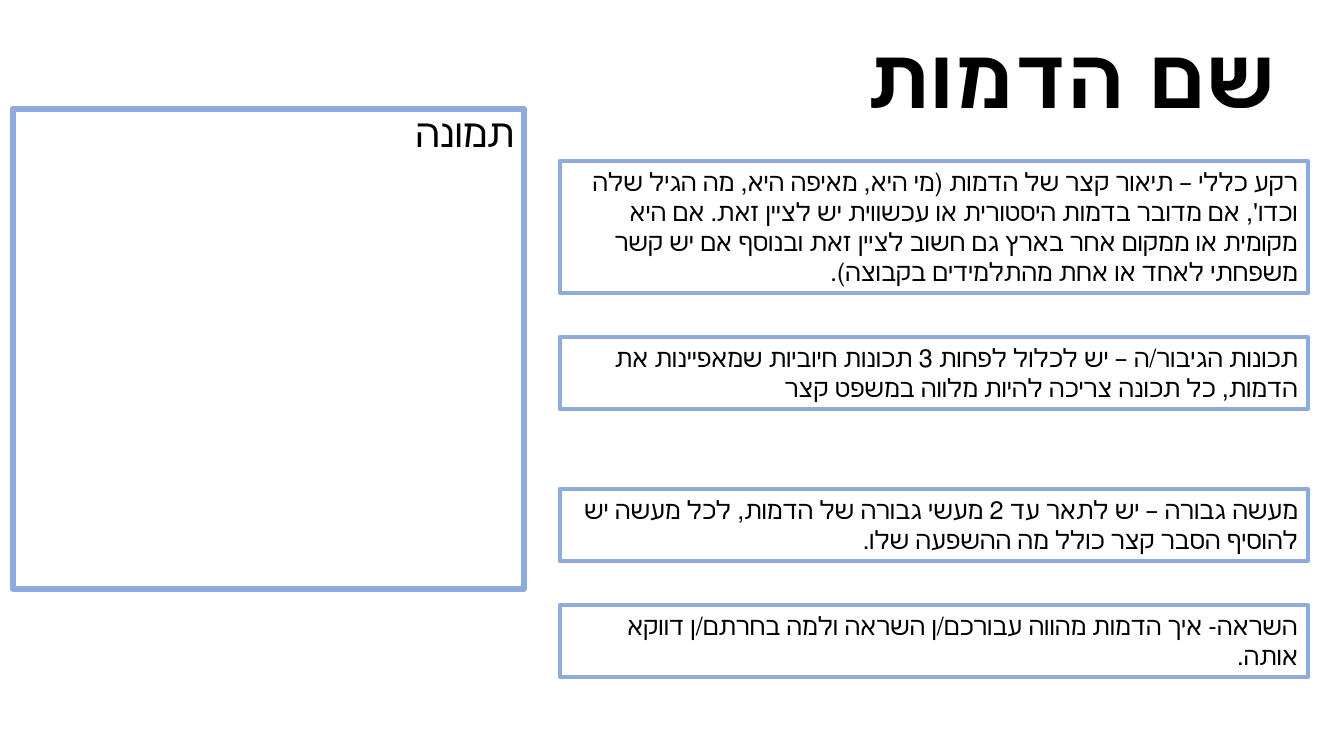
"""Build a Hebrew template slide that presents a hero."""
import dataclasses

import pptx
import pptx.dml.color
import pptx.enum.shapes
import pptx.enum.text
import pptx.util


@dataclasses.dataclass(frozen=True)
class Theme:
    ink: str = "000000"
    edge: str = "8FAADC"
    face: str = "Calibri"
    stop: str = "Montserrat"
    title: int = 60
    label: int = 28
    body: int = 18


@dataclasses.dataclass(frozen=True)
class Box:
    left: int
    top: int
    width: int
    height: int
    text: str
    size: int
    line: float = 0
    bold: bool = False
    space: float = 1
    before: int = 0
    grow: bool = True
    tail: str = ""


THEME = Theme()
SCALE = 914400 / 100.8
LEFT, WIDTH = 560, 748

PARTS = [
    (161, 132, "רקע כללי – תיאור קצר של הדמות (מי היא, מאיפה היא, מה הגיל שלה "
     "וכדו', אם מדובר בדמות היסטורית או עכשווית יש לציין זאת. אם היא "
     "מקומית או ממקום אחר בארץ גם חשוב לציין זאת ובנוסף אם יש קשר "
     "משפחתי לאחד או אחת מהתלמידים בקבוצה).", ""),
    (337, 72, "תכונות הגיבור/ה – יש לכלול לפחות 3 תכונות חיוביות שמאפיינות את "
     "הדמות, כל תכונה צריכה להיות מלווה במשפט קצר", ""),
    (489, 72, "מעשה גבורה – יש לתאר עד 2 מעשי גבורה של הדמות, לכל מעשה יש "
     "להוסיף הסבר קצר כולל מה ההשפעה שלו.", ""),
    (605, 72, "השראה- איך הדמות מהווה עבורכם/ן השראה ולמה בחרתם/ן דווקא אותה",
     "."),
]

BOXES = [
    Box(13, 109, 511, 480, "תמונה", THEME.label, 4.5, space=0.9, before=10,
        grow=False),
    Box(759, 31, 527, 102, "שם הדמות", THEME.title, bold=True, space=0.9),
    *(Box(LEFT, top, WIDTH, height, text, THEME.body, 3, tail=tail)
      for top, height, text, tail in PARTS),
]


def px(count: float) -> pptx.util.Emu:
    """Turn px into EMU."""
    return pptx.util.Emu(round(count * SCALE))


def tint(code: str) -> pptx.dml.color.RGBColor:
    """Turn a hex code into a colour."""
    return pptx.dml.color.RGBColor.from_string(code)


def draw(slide: pptx.slide.Slide, box: Box) -> None:
    """Draw one box with its right-to-left text."""
    place = [px(n) for n in (box.left, box.top, box.width, box.height)]
    if box.line:
        kind = pptx.enum.shapes.MSO_SHAPE.RECTANGLE
        shape = slide.shapes.add_shape(kind, *place)
        shape.shadow.inherit = False
        shape.fill.background()
        shape.line.color.rgb = tint(THEME.edge)
        shape.line.width = pptx.util.Pt(box.line)
    else:
        shape = slide.shapes.add_textbox(*place)
    frame = shape.text_frame
    frame.word_wrap = True
    frame.vertical_anchor = pptx.enum.text.MSO_ANCHOR.TOP
    fit = pptx.enum.text.MSO_AUTO_SIZE
    frame.auto_size = fit.SHAPE_TO_FIT_TEXT if box.grow else fit.NONE
    para = frame.paragraphs[0]
    para.alignment = pptx.enum.text.PP_ALIGN.RIGHT
    para.line_spacing = box.space
    para.space_before = pptx.util.Pt(box.before)
    para.font.name = THEME.face
    para.font.size = pptx.util.Pt(box.size)
    para.font.bold = box.bold
    para.font.color.rgb = tint(THEME.ink)
    para._p.get_or_add_pPr().set("rtl", "1")
    para.add_run().text = box.text
    if box.tail:
        run = para.add_run()
        run.text = box.tail
        run.font.name = THEME.stop


def main() -> None:
    """Build and save the slide."""
    deck = pptx.Presentation()
    deck.slide_width, deck.slide_height = px(1344), px(756)
    slide = deck.slides.add_slide(deck.slide_layouts[6])
    for box in BOXES:
        draw(slide, box)
    deck.save("out.pptx")


if __name__ == "__main__":
    main()
